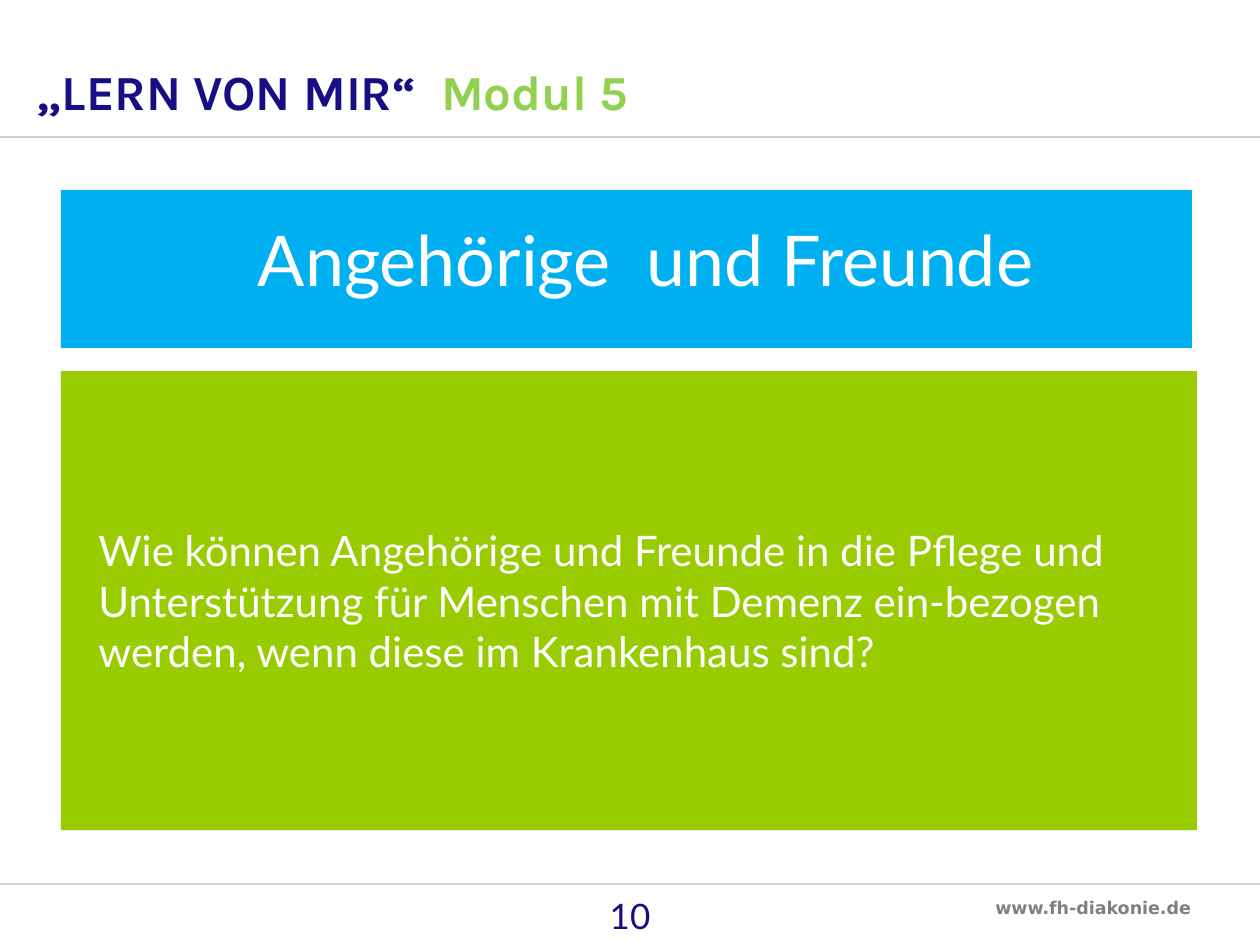
from dataclasses import dataclass

from lxml import etree
from pptx import Presentation
from pptx.dml.color import RGBColor
from pptx.enum.shapes import MSO_CONNECTOR, MSO_SHAPE
from pptx.enum.text import MSO_ANCHOR, MSO_AUTO_SIZE, PP_ALIGN
from pptx.oxml.ns import qn
from pptx.util import Pt

LEFT, CENTER = PP_ALIGN.LEFT, PP_ALIGN.CENTER
TOP, MIDDLE, BOTTOM = MSO_ANCHOR.TOP, MSO_ANCHOR.MIDDLE, MSO_ANCHOR.BOTTOM
STRAIGHT = MSO_CONNECTOR.STRAIGHT
ROUNDED = MSO_SHAPE.ROUNDED_RECTANGLE
NO_FIT = MSO_AUTO_SIZE.NONE


@dataclass(frozen=True)
class Theme:
    navy: str = "170E83"
    module_green: str = "92D050"
    panel_green: str = "99CC00"
    sky: str = "00B0F0"
    white: str = "FFFFFF"
    grey: str = "808080"
    rule: str = "C8D2DC"
    heading_font: str = "Karla"
    text_font: str = "Lato"
    address_font: str = "DejaVu Sans"
    heading_size: int = 28
    topic_size: int = 40
    question_size: int = 24
    number_size: int = 20
    address_size: int = 10


THEME = Theme()
COURSE = "„LERN VON MIR“  "
MODULE = "Modul 5"
TOPIC = "Angehörige  und Freunde"
QUESTION = (
    "Wie können Angehörige und Freunde in die Pflege und Unterstützung "
    "für Menschen mit Demenz ein-bezogen werden, wenn diese im Krankenhaus sind?"
)
PAGE_NUMBER = "10"
ADDRESS = "www.fh-diakonie.de"

SLIDE_WIDTH, SLIDE_HEIGHT = 1260, 945
RULE_HEIGHTS = (137, 884)
HEADING_BOX = (24, 54, 840, 73)
TOPIC_BOX = (61, 190, 1131, 158)
QUESTION_BOX = (61, 371, 1136, 459)
NUMBER_BOX = (483, 888, 294, 57)
ADDRESS_BOX = (983, 891, 224, 34)


def px(length):
    return round(length * 914400 / 126)


def place(box):
    return [px(length) for length in box]


def write(holder, runs, *, font, size, bold=False, align=LEFT, anchor=TOP,
          wrap=True, indent=0, line_spacing=1.0, space_after=0):
    frame = holder.text_frame
    frame.auto_size = NO_FIT
    frame.word_wrap = wrap
    frame.vertical_anchor = anchor
    paragraph = frame.paragraphs[0]
    paragraph.alignment = align
    paragraph.line_spacing = line_spacing
    paragraph.space_before = Pt(0)
    paragraph.space_after = Pt(space_after)
    properties = paragraph._p.get_or_add_pPr()
    properties.set("marL", str(px(indent)))
    properties.set("indent", "0")
    for text, color in runs:
        run = paragraph.add_run()
        run.text = text
        run.font.name = font
        run.font.size = Pt(size)
        run.font.bold = bold
        run.font.color.rgb = RGBColor.from_string(color)


def add_panel(slide, box, color):
    panel = slide.shapes.add_shape(ROUNDED, *place(box))
    panel.adjustments[0] = 0
    panel.shadow.inherit = False
    panel.fill.solid()
    panel.fill.fore_color.rgb = RGBColor.from_string(color)
    panel.line.fill.background()
    return panel


def add_rule(slide, height):
    rule = slide.shapes.add_connector(
        STRAIGHT, 0, px(height), px(SLIDE_WIDTH), px(height))
    rule.line.color.rgb = RGBColor.from_string(THEME.rule)
    rule.line.width = Pt(1.5)
    etree.SubElement(rule._element.spPr, qn("a:effectLst"))


def main():
    deck = Presentation()
    deck.slide_width, deck.slide_height = px(SLIDE_WIDTH), px(SLIDE_HEIGHT)
    slide = deck.slides.add_slide(deck.slide_layouts[5])

    address = slide.shapes.add_textbox(*place(ADDRESS_BOX))
    write(address, [(ADDRESS, THEME.grey)], font=THEME.address_font,
          size=THEME.address_size, bold=True, wrap=False)

    for height in RULE_HEIGHTS:
        add_rule(slide, height)

    question = add_panel(slide, QUESTION_BOX, THEME.panel_green)
    write(question, [(QUESTION, THEME.white)], font=THEME.text_font,
          size=THEME.question_size, anchor=MIDDLE, indent=25, space_after=12)

    number = slide.shapes.add_textbox(*place(NUMBER_BOX))
    write(number, [(PAGE_NUMBER, THEME.navy)], font=THEME.text_font,
          size=THEME.number_size, align=CENTER)

    heading = slide.shapes.title
    heading.left, heading.top, heading.width, heading.height = place(HEADING_BOX)
    write(heading, [(COURSE, THEME.navy), (MODULE, THEME.module_green)],
          font=THEME.heading_font, size=THEME.heading_size, bold=True,
          anchor=BOTTOM, line_spacing=0.9)

    topic = add_panel(slide, TOPIC_BOX, THEME.sky)
    write(topic, [(TOPIC, THEME.white)], font=THEME.text_font,
          size=THEME.topic_size, align=CENTER, anchor=MIDDLE, indent=38,
          line_spacing=0.7, space_after=6)

    deck.save("out.pptx")


if __name__ == "__main__":
    main()
